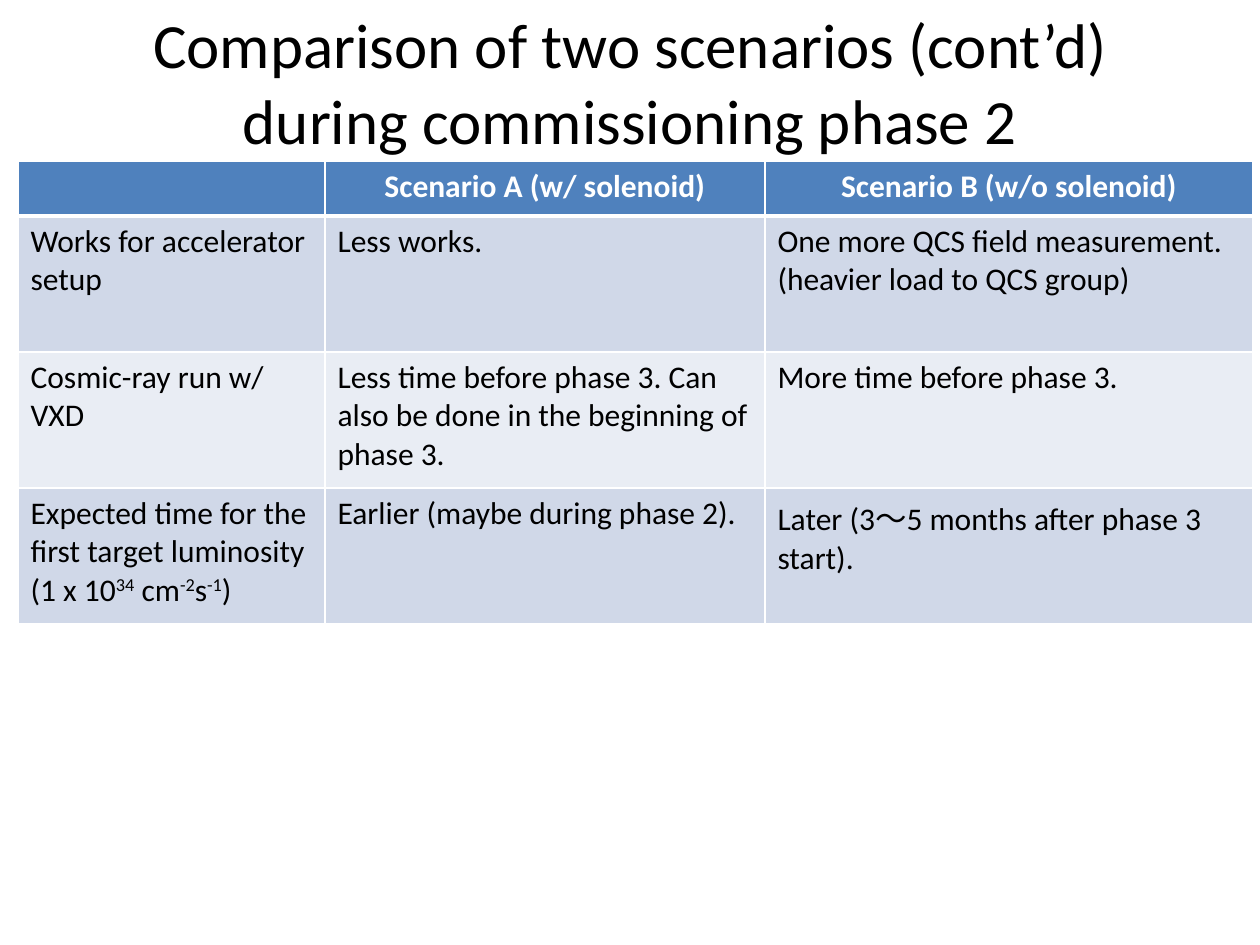
from lxml import etree
from pptx import Presentation
from pptx import util as u
from pptx.dml import color
from pptx.enum import text
from pptx.oxml import ns

PX_PER_INCH = 126
FONT = "Calibri"
BLACK, WHITE, HEADER = "000000", "FFFFFF", "4F81BD"
BANDS = ["D0D8E8", "E9EDF4"]
TITLE = ["Comparison of two scenarios (cont’d)", "during commissioning phase 2"]
HEADINGS = ["", "Scenario A (w/ solenoid)", "Scenario B (w/o solenoid)"]
LUMINOSITY = [
    ("Expected time for the first target luminosity (1 x 10", False),
    ("34", True), (" cm", False), ("-2", True), ("s", False), ("-1", True), (")", False),
]
COMPARISONS = [
    ["Works for accelerator setup", "Less works.",
     "One more QCS field measurement. (heavier load to QCS group)"],
    ["Cosmic-ray run w/ VXD",
     "Less time before phase 3. Can also be done in the beginning of phase 3.",
     "More time before phase 3."],
    [LUMINOSITY, "Earlier (maybe during phase 2).",
     "Later (3〜5 months after phase 3 start)."],
]


def px(length):
    return u.Emu(round(length * 914400 / PX_PER_INCH))


def rgb(value):
    return color.RGBColor.from_string(value)


def add_run(paragraph, wording, size, ink, bold=False, raised=False):
    run = paragraph.add_run()
    run.text = wording
    run.font.name = FONT
    run.font.size = u.Pt(size)
    run.font.bold = bold
    run.font.color.rgb = rgb(ink)
    if raised:
        run.font._element.set("baseline", "30000")


def set_borders(cell, top, bottom):
    properties = cell._tc.get_or_add_tcPr()
    widths = {"lnL": 1, "lnR": 1, "lnT": top, "lnB": bottom}
    for position, (side, width) in enumerate(widths.items()):
        line = etree.Element(ns.qn(f"a:{side}"), w=str(u.Pt(width)))
        fill = etree.SubElement(line, ns.qn("a:solidFill"))
        etree.SubElement(fill, ns.qn("a:srgbClr"), val=WHITE)
        properties.insert(position, line)


def add_title(slide, left, top, width, height):
    title = slide.shapes.add_textbox(px(left), px(top), px(width), px(height))
    frame = title.text_frame
    frame.word_wrap = True
    frame.vertical_anchor = text.MSO_ANCHOR.MIDDLE
    paragraph = frame.paragraphs[0]
    paragraph.alignment = text.PP_ALIGN.CENTER
    add_run(paragraph, TITLE[0], 36, BLACK)
    paragraph.add_line_break()
    add_run(paragraph, TITLE[1], 36, BLACK)


def add_comparison(slide, left, top, column_widths, row_heights):
    table = slide.shapes.add_table(
        len(row_heights), len(column_widths), px(left), px(top),
        px(sum(column_widths)), px(sum(row_heights))).table
    for column, width in zip(table.columns, column_widths):
        column.width = px(width)
    for row, height in zip(table.rows, row_heights):
        row.height = px(height)
    for r, entries in enumerate([HEADINGS] + COMPARISONS):
        heading = r == 0
        for c, entry in enumerate(entries):
            cell = table.cell(r, c)
            cell.fill.solid()
            cell.fill.fore_color.rgb = rgb(HEADER if heading else BANDS[(r - 1) % 2])
            set_borders(cell, 3 if r == 1 else 1, 3 if heading else 1)
            paragraph = cell.text_frame.paragraphs[0]
            if heading:
                paragraph.alignment = text.PP_ALIGN.CENTER
            pieces = [(entry, False)] if isinstance(entry, str) else entry
            for wording, raised in pieces:
                if wording:
                    add_run(paragraph, wording, 18, WHITE if heading else BLACK,
                            heading, raised)


def main():
    deck = Presentation()
    deck.slide_width, deck.slide_height = px(1260), px(945)
    slide = deck.slides.add_slide(deck.slide_layouts[6])
    add_title(slide, 63, 3, 1134, 157)
    add_comparison(slide, 18, 161, [307, 440, 488], [55] + [136] * 3)
    deck.save("out.pptx")


if __name__ == "__main__":
    main()
